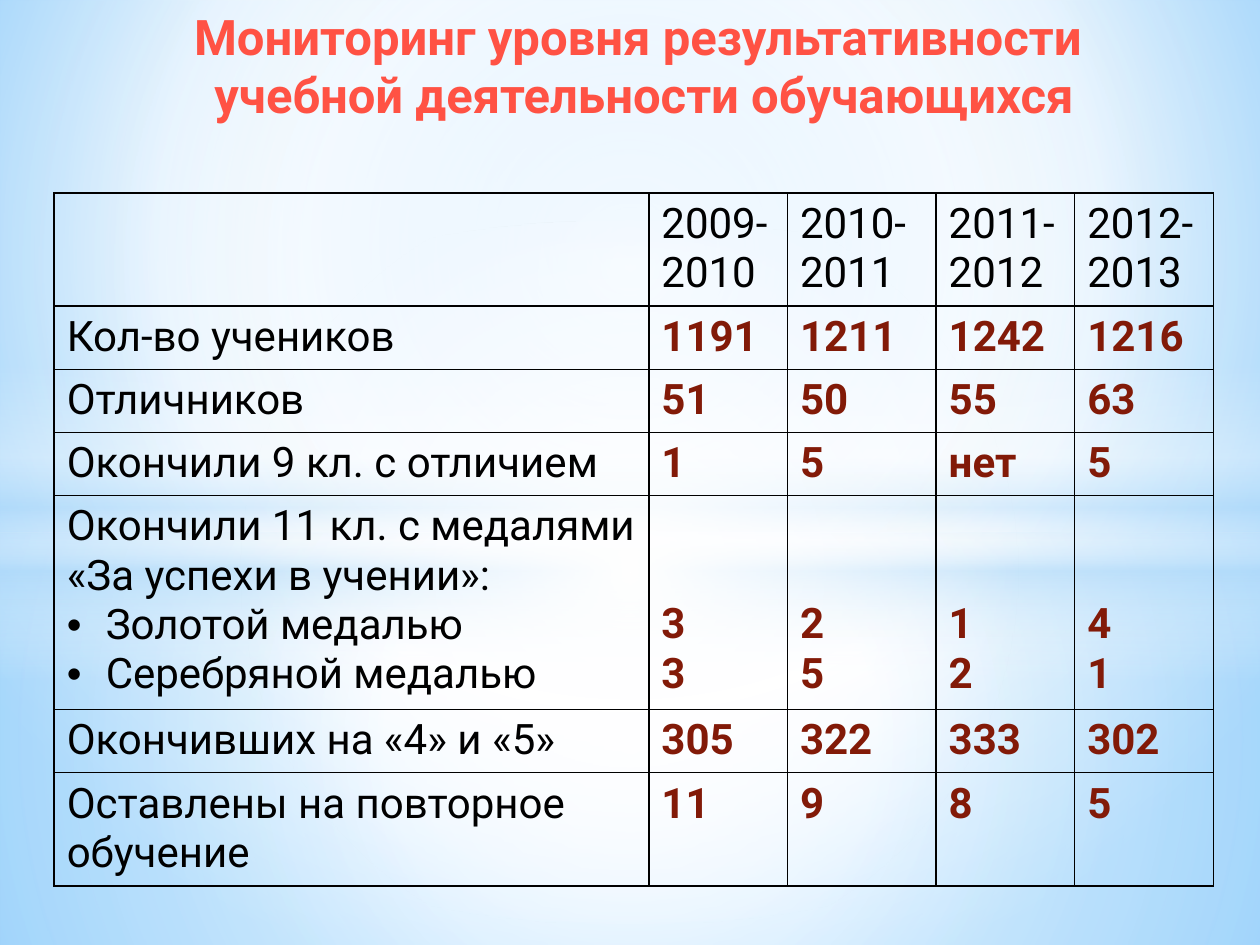
from lxml.etree import SubElement
from pptx import Presentation
from pptx.dml.color import RGBColor
from pptx.enum.shapes import MSO_SHAPE
from pptx.enum.text import MSO_AUTO_SIZE, PP_ALIGN
from pptx.oxml.ns import qn
from pptx.util import Inches, Pt

BLACK = RGBColor(0x00, 0x00, 0x00)
WHITE = RGBColor(0xFF, 0xFF, 0xFF)
MAROON = RGBColor(0x82, 0x1A, 0x08)
DARK_RED = RGBColor(0x8A, 0x13, 0x00)
CORAL = RGBColor(0xFF, 0x52, 0x44)
BLUSH = RGBColor(0xFF, 0xF0, 0xF0)
SKY = RGBColor(0x9E, 0xD5, 0xFF)
DEEP_SKY = RGBColor(0x5B, 0xB9, 0xFF)
PALE_BLUE = RGBColor(0xB4, 0xDC, 0xFA)

CENTER = (50, 50, 50, 50)
TITLE = ["Мониторинг уровня результативности ", "учебной деятельности обучающихся"]
TITLE_STOPS = [(0, DARK_RED, 100), (78, CORAL, 100), (100, BLUSH, 100)]

YEARS = ["2009-2010", "2010-2011", "2011-2012", "2012-2013"]
MEDALS_HEADING = "Окончили 11 кл. с медалями «За успехи в учении»:"
MEDALS = ["Золотой медалью", "Серебряной медалью"]
# Each row: height, label, values by year
RESULTS = [
    (0.5, "Кол-во учеников", ["1191", "1211", "1242", "1216"]),
    (0.5, "Отличников", ["51", "50", "55", "63"]),
    (0.5, "Окончили 9 кл. с отличием", ["1", "5", "нет", "5"]),
    (1.7, MEDALS_HEADING, [("3", "3"), ("2", "5"), ("1", "2"), ("4", "1")]),
    (0.5, "Окончивших на «4» и «5»", ["305", "322", "333", "302"]),
    (0.9, "Оставлены на повторное обучение", ["11", "9", "8", "5"]),
]
HEADER_HEIGHT = 0.9
COLUMN_WIDTHS = [4.72, 1.1, 1.18, 1.1, 1.1]
MEDAL_VALUES_TOP = 0.83


def set_gradient(fill, owner, stops, focus=None, angle=90):
    """Fill with (position, colour, opacity) stops, round a focus or along an angle."""
    fill.gradient()
    gradient = owner.find(".//" + qn("a:gradFill"))
    for child in list(gradient):
        gradient.remove(child)
    stop_list = SubElement(gradient, qn("a:gsLst"))
    for position, color, opacity in stops:
        stop = SubElement(stop_list, qn("a:gs"), pos=str(position * 1000))
        value = SubElement(stop, qn("a:srgbClr"), val=str(color))
        if opacity < 100:
            SubElement(value, qn("a:alpha"), val=str(opacity * 1000))
    if focus:
        path_element = SubElement(gradient, qn("a:path"), path="circle")
        edges = {side: str(edge * 1000) for side, edge in zip("ltrb", focus)}
        SubElement(path_element, qn("a:fillToRect"), **edges)
    else:
        SubElement(gradient, qn("a:lin"), ang=str(angle * 60000), scaled="0")


def write_text(frame, lines, size=24, color=BLACK, stops=None, bold=False,
               align=PP_ALIGN.LEFT, bulleted=False, font="Roboto"):
    """Write each line as a paragraph after any text already in the frame."""
    for line in lines:
        paragraph = frame.paragraphs[0] if not frame.text else frame.add_paragraph()
        paragraph.alignment = align
        if bulleted:
            properties = paragraph._p.get_or_add_pPr()
            properties.set("marL", str(Inches(0.31)))
            properties.set("indent", str(Inches(-0.31)))
            SubElement(properties, qn("a:buFont"), typeface="Arial")
            SubElement(properties, qn("a:buChar"), char="•")
        run = paragraph.add_run()
        run.text = line
        run.font.name = font
        run.font.size = Pt(size)
        run.font.bold = bold
        if stops:
            set_gradient(run.font.fill, run._r, stops)
        else:
            run.font.color.rgb = color


class SlideBuilder:
    def __init__(self, slide, border_color=BLACK, border_width=1):
        self.slide = slide
        self.border_color = border_color
        self.border_width = border_width

    def background(self, stops, focus):
        set_gradient(self.slide.background.fill, self.slide._element, stops, focus)

    def glow(self, kind, top, height, stops, focus=None):
        shape = self.slide.shapes.add_shape(
            kind, 0, Inches(top), Inches(10), Inches(height))
        shape.shadow.inherit = False
        shape.line.fill.background()
        set_gradient(shape.fill, shape._element, stops, focus)

    def title(self, lines, left, top, width, height):
        box = self.slide.shapes.add_textbox(
            Inches(left), Inches(top), Inches(width), Inches(height))
        box.text_frame.word_wrap = False
        box.text_frame.auto_size = MSO_AUTO_SIZE.SHAPE_TO_FIT_TEXT
        write_text(box.text_frame, lines, size=28, stops=TITLE_STOPS, bold=True,
                   align=PP_ALIGN.CENTER)

    def style_cell(self, cell):
        properties = cell._tc.get_or_add_tcPr()
        for side in ("lnL", "lnR", "lnT", "lnB"):
            line = SubElement(properties, qn("a:" + side), w=str(Pt(self.border_width)))
            fill = SubElement(line, qn("a:solidFill"))
            SubElement(fill, qn("a:srgbClr"), val=str(self.border_color))
        cell.fill.background()

    def table(self, left, top, widths, heights):
        table = self.slide.shapes.add_table(
            len(heights), len(widths), Inches(left), Inches(top),
            Inches(sum(widths)), Inches(sum(heights))).table
        table.first_row = False
        table.horz_banding = False
        for column, width in zip(table.columns, widths):
            column.width = Inches(width)
        for row, height in zip(table.rows, heights):
            row.height = Inches(height)
        for cell in table.iter_cells():
            self.style_cell(cell)
        return table


def fill_results(table):
    for column, year in enumerate(YEARS, 1):
        write_text(table.cell(0, column).text_frame, [year])
    for row, (_, label, values) in enumerate(RESULTS, 1):
        label_frame = table.cell(row, 0).text_frame
        write_text(label_frame, [label])
        if label == MEDALS_HEADING:
            write_text(label_frame, MEDALS, bulleted=True)
        for column, value in enumerate(values, 1):
            cell = table.cell(row, column)
            lines = [value]
            if label == MEDALS_HEADING:
                lines = value
                cell.margin_top = Inches(MEDAL_VALUES_TOP)
            write_text(cell.text_frame, lines, color=MAROON, bold=True)


def main():
    presentation = Presentation()
    presentation.slide_width = Inches(10)
    presentation.slide_height = Inches(7.5)
    builder = SlideBuilder(presentation.slides.add_slide(presentation.slide_layouts[6]))

    builder.background([(0, SKY, 100), (60, WHITE, 100), (100, DEEP_SKY, 100)],
                       (20, 10, 20, 60))
    builder.glow(MSO_SHAPE.RECTANGLE, 4.23, 3.27,
                 [(0, WHITE, 91), (37, WHITE, 76), (100, PALE_BLUE, 79)], CENTER)
    builder.glow(MSO_SHAPE.RECTANGLE, 0, 4.23,
                 [(0, WHITE, 89), (48, WHITE, 62), (100, PALE_BLUE, 79)], CENTER)
    builder.glow(MSO_SHAPE.RECTANGLE, 2.9, 2.5,
                 [(0, WHITE, 0), (29, WHITE, 30), (45, PALE_BLUE, 40),
                  (55, WHITE, 26), (65, PALE_BLUE, 60), (100, WHITE, 0)])
    builder.glow(MSO_SHAPE.OVAL, 1.75, 5.58, [(0, WHITE, 100), (54, WHITE, 0)], CENTER)

    builder.title(TITLE, 1.3, 0, 7.62, 1.04)
    heights = [HEADER_HEIGHT] + [height for height, _, _ in RESULTS]
    fill_results(builder.table(0.43, 1.53, COLUMN_WIDTHS, heights))
    presentation.save("out.pptx")


if __name__ == "__main__":
    main()
